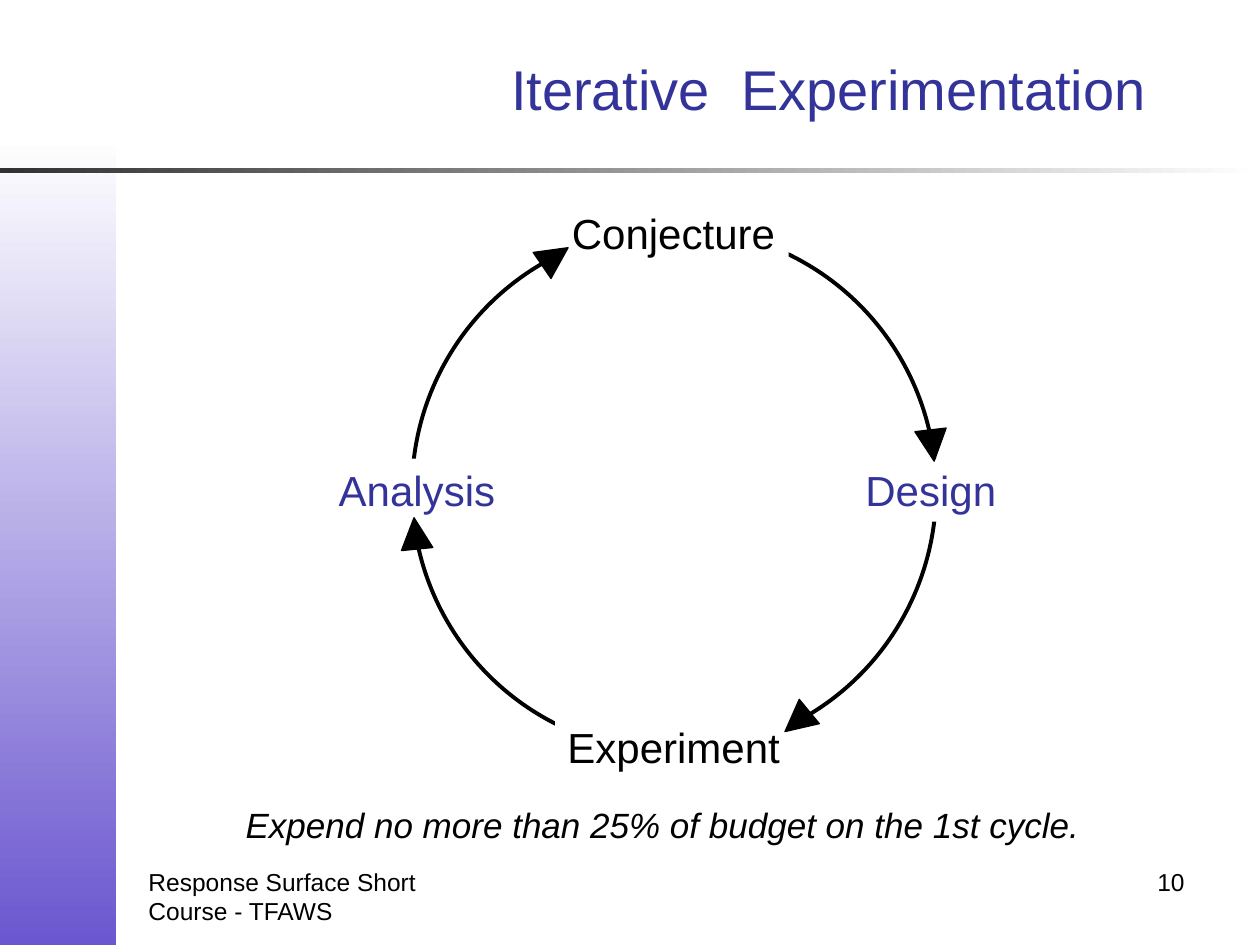
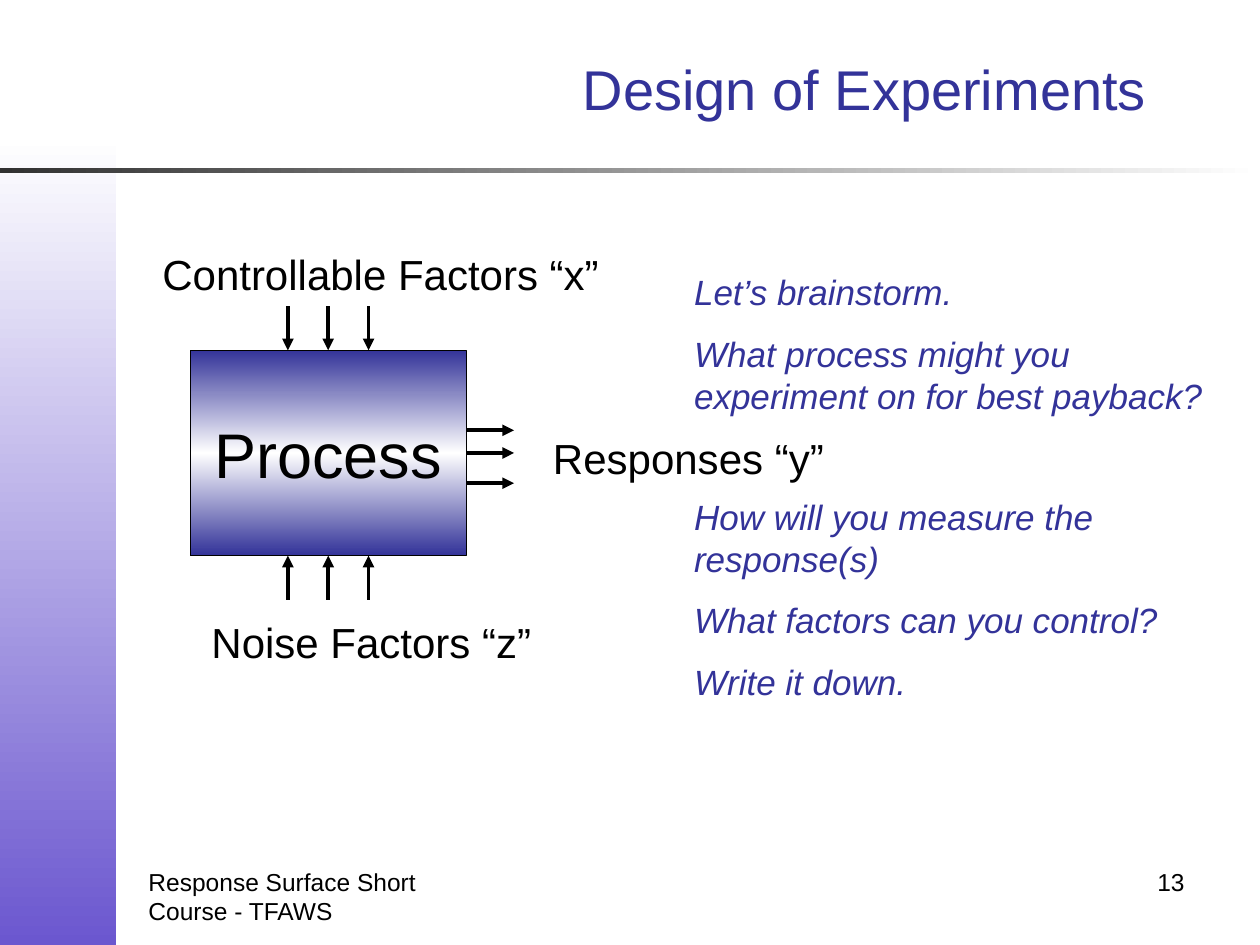
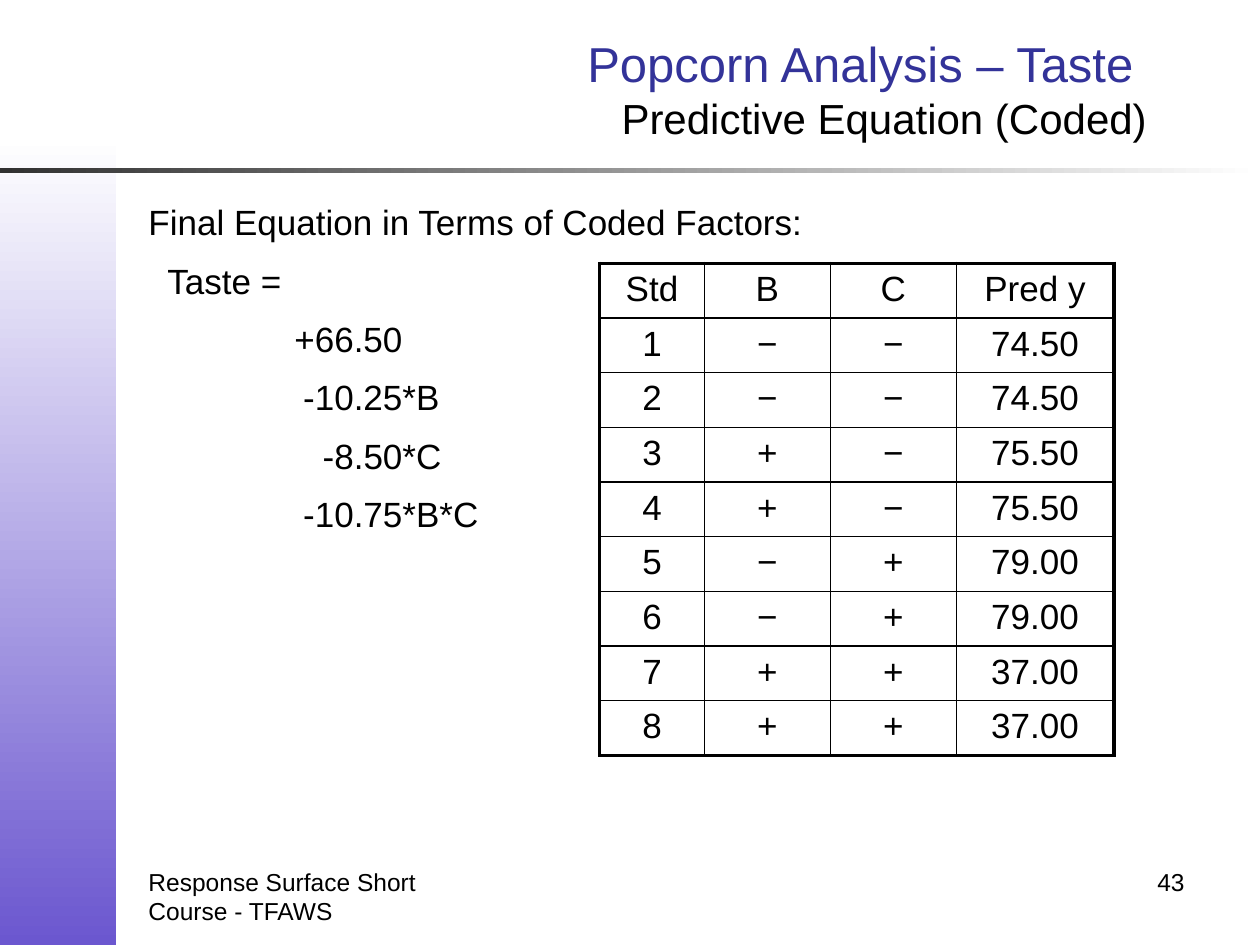
"""Builds three slides of a short course on response surface experiments."""
import math
from lxml import etree
from pptx import Presentation
from pptx.dml.color import RGBColor
from pptx.enum.shapes import MSO_CONNECTOR, MSO_SHAPE
from pptx.enum.text import MSO_ANCHOR, MSO_AUTO_SIZE, PP_ALIGN
from pptx.oxml.ns import qn
from pptx.util import Inches, Pt

RECT, OVAL, TRIANGLE = MSO_SHAPE.RECTANGLE, MSO_SHAPE.OVAL, MSO_SHAPE.ISOSCELES_TRIANGLE
STRAIGHT = MSO_CONNECTOR.STRAIGHT
LEFT, CENTER, RIGHT = PP_ALIGN.LEFT, PP_ALIGN.CENTER, PP_ALIGN.RIGHT
MIDDLE, GROW = MSO_ANCHOR.MIDDLE, MSO_AUTO_SIZE.SHAPE_TO_FIT_TEXT
TOP_SIDE, BOTTOM_SIDE, RIGHT_SIDE = 0, 2, 3

WIDTH, HEIGHT = 10, 7.5
FONT = "Arial"
COLORS = {"ink": "000000", "accent": "333399", "paper": "FFFFFF",
          "band": "6B57CF", "rule": "313131"}

FOOTER = "Response Surface Short Course - TFAWS"

CYCLE_TITLE = [("Iterative  Experimentation", 32, "accent")]
CYCLE_STEPS = [("Conjecture", 1.82, "ink"), ("Design", 1.24, "accent"),
               ("Experiment", 1.89, "ink"), ("Analysis", 1.44, "accent")]
CYCLE_ARROWS = [(170.5, 354.4), (243, 55.7), (-9.8, 173.4), (62, 230.5)]
CYCLE_CENTER, CYCLE_RADIUS, STEP_RADIUS = (5.35, 3.89), 2.08, 2.04
BUDGET_NOTE = "Expend no more than 25% of budget on the 1st cycle."

PROCESS_TITLE = [("Design of Experiments", 32, "accent")]
PROCESS_BOX = (1.51, 2.78, 2.19, 1.63)
PROCESS_LABELS = [("Noise Factors “z”", 1.58, 4.84, 2.74),
                  ("Controllable Factors “x”", 1.19, 1.92, 3.67),
                  ("Responses “y”", 4.29, 3.38, 2.35)]
QUESTIONS = [("Let’s brainstorm.", 0),
             ("What process might you experiment on for best payback?", 11),
             ("How will you measure the response(s)", 45.5),
             ("What factors can you control?", 11),
             ("Write it down.", 11)]

TASTE_TITLE = [("Popcorn Analysis – Taste ", 28, "accent"),
               ("Predictive Equation (Coded)", 24, "ink")]
EQUATION = [("Final Equation in Terms of Coded Factors:", 0), ("Taste =", 0.15),
            ("\t+66.50", 0), ("\t-10.25*B", 0), ("\t-8.50*C", 0), ("\t-10.75*B*C", 0)]
PREDICTIONS = [("Std", "B", "C", "Pred y"),
               ("1", "−", "−", "74.50"), ("2", "−", "−", "74.50"),
               ("3", "+", "−", "75.50"), ("4", "+", "−", "75.50"),
               ("5", "−", "+", "79.00"), ("6", "−", "+", "79.00"),
               ("7", "+", "+", "37.00"), ("8", "+", "+", "37.00")]
PREDICTION_COLUMNS = (0.83, 1, 1, 1.25)
PREDICTIONS_HEIGHT = 3.9


def rgb(name):
    return RGBColor.from_string(COLORS[name])


def inches(*lengths):
    return [Inches(length) for length in lengths]


def add_run(paragraph, text, size, color="ink", italic=False):
    run = paragraph.add_run()
    run.text = text
    run.font.name, run.font.size, run.font.italic = FONT, Pt(size), italic
    run.font.color.rgb = rgb(color)


def next_paragraph(frame, index):
    return frame.add_paragraph() if index else frame.paragraphs[0]


def write(frame, text, size, color="ink", italic=False, align=LEFT):
    paragraph = frame.paragraphs[0]
    paragraph.alignment = align
    add_run(paragraph, text, size, color, italic)


def add_box(slide, at):
    frame = slide.shapes.add_textbox(*inches(*at)).text_frame
    frame.word_wrap = True
    return frame


def fit(frame):
    frame.word_wrap, frame.auto_size = False, GROW
    return frame


def add_plain(slide, kind, at, fill=None, line=None, weight=0.75):
    shape = slide.shapes.add_shape(kind, *inches(*at))
    shape.shadow.inherit = False
    if fill:
        shape.fill.solid()
        shape.fill.fore_color.rgb = rgb(fill)
    else:
        shape.fill.background()
    if line:
        shape.line.color.rgb = rgb(line)
        shape.line.width = Pt(weight)
    else:
        shape.line.fill.background()
    return shape


def add_gradient(slide, at, names, angle, line=None):
    shape = add_plain(slide, RECT, at, line=line)
    shape.fill.gradient()
    shape.fill.gradient_angle = -angle % 360
    stops = shape._element.spPr.find(qn("a:gradFill")).find(qn("a:gsLst"))
    for stop in list(stops):
        stops.remove(stop)
    for index, name in enumerate(names):
        position = 100000 * index // (len(names) - 1)
        stop = etree.SubElement(stops, qn("a:gs"), pos=str(position))
        etree.SubElement(stop, qn("a:srgbClr"), val=COLORS[name])
    return shape


def add_arrow(slide, start, tip):
    arrow = slide.shapes.add_connector(STRAIGHT, *inches(*start, *tip))
    arrow.line.color.rgb = rgb("ink")
    arrow.line.width = Pt(2.25)
    etree.SubElement(arrow.line._get_or_add_ln(), qn("a:tailEnd"), type="triangle")
    etree.SubElement(arrow._element.spPr, qn("a:effectLst"))
    return arrow


def add_page(deck, title, number):
    slide = deck.slides.add_slide(deck.slide_layouts[6])
    add_gradient(slide, (0, 1.08, 0.92, HEIGHT - 1.08), ("paper", "band"), 90)
    add_gradient(slide, (0, 1.33, WIDTH, 0.04), ("rule", "paper"), 0)
    write(add_box(slide, (1.08, 6.83, 2.33, 0.52)), FOOTER, 14)
    write(add_box(slide, (7.17, 6.83, 2.33, 0.52)), str(number), 14, align=RIGHT)
    heading = add_box(slide, (2, 0.1, 7.2, 1.2))
    heading.vertical_anchor = MIDDLE
    paragraph = heading.paragraphs[0]
    paragraph.alignment = RIGHT
    for index, (text, size, color) in enumerate(title):
        if index:
            paragraph.add_line_break()
        add_run(paragraph, text, size, color)
    return slide


def on_circle(angle, radius):
    turn = math.radians(angle)
    x, y = CYCLE_CENTER
    return x + radius * math.cos(turn), y + radius * math.sin(turn)


def centered(point, width, height):
    return point[0] - width / 2, point[1] - height / 2, width, height


def build_cycle(deck):
    slide = add_page(deck, CYCLE_TITLE, 10)
    write(add_box(slide, (0.94, 6.33, 8.64, 0.59)), BUDGET_NOTE, 20,
          italic=True, align=CENTER)
    add_plain(slide, OVAL, centered(CYCLE_CENTER, 2 * CYCLE_RADIUS, 2 * CYCLE_RADIUS),
              line="ink", weight=2.25)
    for index, (step, width, color) in enumerate(CYCLE_STEPS):
        point = on_circle(90 * index - 90, STEP_RADIUS)
        label = add_plain(slide, RECT, centered(point, width, 0.5), "paper")
        write(fit(label.text_frame), step, 24, color)
    for angle, rotation in CYCLE_ARROWS:
        point = on_circle(angle, CYCLE_RADIUS)
        tip = add_plain(slide, TRIANGLE, centered(point, 0.25, 0.25), "ink", "ink")
        tip.rotation = rotation


def build_process(deck):
    slide = add_page(deck, PROCESS_TITLE, 13)
    left, top, width, height = PROCESS_BOX
    right, bottom = left + width, top + height
    process = add_gradient(slide, PROCESS_BOX, ("accent", "paper", "accent"), 90, "ink")
    process.text_frame.word_wrap = False
    process.text_frame.vertical_anchor = MIDDLE
    write(process.text_frame, "Process", 36, align=CENTER)
    for step in (-1, 0, 1):
        x = left + width / 2 + 0.32 * step
        y = top + height / 2 + 0.21 * step + 0.03
        noise = add_arrow(slide, (x, bottom + 0.35), (x, bottom))
        control = add_arrow(slide, (x, top - 0.35), (x, top))
        response = add_arrow(slide, (right, y), (right + 0.38, y))
        if step == 0:
            response.end_y = Inches(top + height / 2)
            noise.end_connect(process, BOTTOM_SIDE)
            control.end_connect(process, TOP_SIDE)
            response.begin_connect(process, RIGHT_SIDE)
    for text, x, y, length in PROCESS_LABELS:
        write(fit(add_box(slide, (x, y, length, 0.5))), text, 24)
    questions = add_box(slide, (5.41, 2.1, 4.32, 3.6))
    for index, (text, gap) in enumerate(QUESTIONS):
        paragraph = next_paragraph(questions, index)
        paragraph.space_before = Pt(gap)
        add_run(paragraph, text, 20, "accent", True)


def add_borders(cell, weights):
    properties = cell._tc.get_or_add_tcPr()
    for side, weight in weights.items():
        line = etree.SubElement(properties, qn("a:ln" + side), w=str(Pt(weight)))
        fill = etree.SubElement(line, qn("a:solidFill"))
        etree.SubElement(fill, qn("a:srgbClr"), val=COLORS["ink"])


def build_taste(deck):
    slide = add_page(deck, TASTE_TITLE, 43)
    equation = add_box(slide, (1.08, 1.51, 5.42, 3.8))
    for index, (text, indent) in enumerate(EQUATION):
        paragraph = next_paragraph(equation, index)
        properties = paragraph._p.get_or_add_pPr()
        properties.set("marL", str(Inches(indent)))
        tabs = etree.SubElement(properties, qn("a:tabLst"))
        etree.SubElement(tabs, qn("a:tab"), pos=str(Inches(1.63)), algn="dec")
        paragraph.line_spacing = 1.1
        paragraph.space_before = Pt(7 if index else 0)
        add_run(paragraph, text, 20)

    rows, columns = len(PREDICTIONS), len(PREDICTION_COLUMNS)
    table = slide.shapes.add_table(rows, columns, *inches(
        4.76, 2.09, sum(PREDICTION_COLUMNS), PREDICTIONS_HEIGHT)).table
    table.first_row = table.horz_banding = False
    for column, width in zip(table.columns, PREDICTION_COLUMNS):
        column.width = Inches(width)
    for r, values in enumerate(PREDICTIONS):
        table.rows[r].height = Inches(PREDICTIONS_HEIGHT / rows)
        for c, value in enumerate(values):
            cell = table.cell(r, c)
            outer = {"L": c == 0, "R": c == columns - 1, "T": r == 0, "B": r == rows - 1}
            add_borders(cell, {side: 2.25 if edge else 1 for side, edge in outer.items()})
            cell.fill.background()
            write(cell.text_frame, value, 20, align=CENTER)


def main():
    deck = Presentation()
    deck.slide_width, deck.slide_height = inches(WIDTH, HEIGHT)
    build_cycle(deck)
    build_process(deck)
    build_taste(deck)
    deck.save("out.pptx")


if __name__ == "__main__":
    main()
